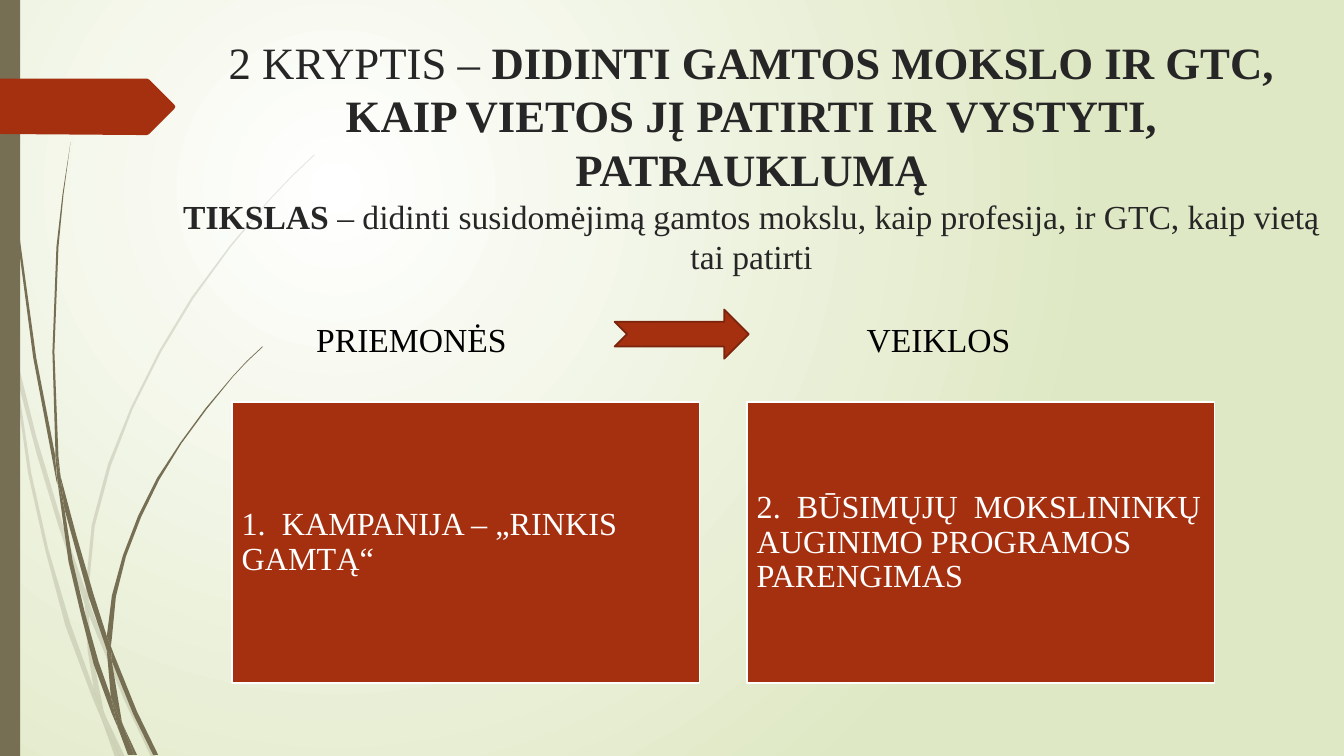
from lxml import etree
from pptx import Presentation, util as u
from pptx.dml.color import RGBColor
from pptx.enum import shapes, text
from pptx.oxml import parse_xml
from pptx.oxml.ns import nsdecls, qn

# Content: each title line is a list of (text, bold, size)
TITLE_LINES = [
    [("2 KRYPTIS – ", False, 32),
     ("DIDINTI GAMTOS MOKSLO IR GTC, KAIP VIETOS JĮ PATIRTI IR VYSTYTI, PATRAUKLUMĄ", True, 32)],
    [("TIKSLAS", True, 24),
     (" – didinti susidomėjimą gamtos mokslu, kaip profesija, ir GTC, kaip vietą tai patirti", False, 24)],
]
HEADINGS = [("PRIEMONĖS", 7.72), ("VEIKLOS", 21.59)]  # text, left in cm
CARDS = ["1.  KAMPANIJA – „RINKIS GAMTĄ“",
         "2.  BŪSIMŲJŲ  MOKSLININKŲ AUGINIMO PROGRAMOS PARENGIMAS"]

FONT = "Times New Roman"
RUST, DARK_RUST, OLIVE, WHITE = "A53010", "7A240C", "766F54", "FFFFFF"
PALE_GREEN, BLACK, TITLE_GREY = "DFE8C4", "000000", "262626"
SLIDE_WIDTH, SLIDE_HEIGHT = u.Cm(33.87), u.Cm(19.05)

# Outlines of the grass blades and the pennant, in units of 0.0254 cm
UNIT = u.Cm(0.0254)
FAINT_GRASS = [
    [(11, 350), (9, 322), (0, 282), (0, 299), (10, 344)],
    [(58, 522), (84, 599), (85, 586), (62, 520), (36, 433), (14, 345), (17, 376), (36, 449)],
    [(92, 607), (88, 596), (88, 610), (123, 694), (150, 751), (155, 751), (127, 692)],
    [(119, 751), (124, 751), (105, 711)],
    [(93, 683), (70, 619), (48, 545), (31, 469), (17, 376), (11, 350), (28, 470), (45, 546),
     (65, 621), (92, 693), (101, 714), (99, 707)],
    [(84, 599), (87, 646), (93, 683), (96, 692), (105, 711), (103, 706), (91, 646), (88, 610), (88, 608)],
    [(88, 584), (94, 522), (110, 462), (132, 405), (160, 349), (192, 296), (229, 245), (268, 198),
     (290, 175), (312, 154), (312, 153), (289, 175), (268, 197), (228, 244), (190, 295), (158, 348),
     (130, 404), (107, 461), (91, 521), (85, 584), (85, 586), (88, 596)],
    [(101, 714), (114, 751), (119, 751)],
    [(88, 608), (88, 610), (88, 596), (85, 586), (84, 599)],
    [(96, 692), (93, 683), (99, 707), (101, 714), (119, 751), (105, 711)],
]
GRASS = [
    [(7, 110), (17, 233), (33, 355), (56, 477), (57, 481), (55, 457), (55, 453), (36, 355),
     (19, 232), (8, 109), (5, 48), (4, 0), (3, 0), (4, 48)],
    [(88, 592), (106, 645), (106, 633), (106, 631), (93, 590), (76, 532), (60, 472), (64, 505)],
    [(113, 649), (110, 641), (111, 656), (132, 708), (152, 749), (157, 749), (136, 706)],
    [(110, 691), (98, 657), (84, 607), (72, 556), (64, 505), (57, 477), (68, 557), (80, 608),
     (93, 659), (111, 708), (117, 722), (116, 717)],
    [(60, 472), (58, 453), (54, 349), (58, 245), (63, 193), (70, 141), (62, 193), (56, 245),
     (52, 349), (55, 449)],
    [(133, 749), (136, 749), (122, 719)],
    [(57, 477), (64, 505), (60, 472), (55, 449), (55, 453)],
    [(111, 633), (115, 592), (125, 552), (140, 513), (158, 476), (180, 440), (205, 406), (231, 374),
     (245, 359), (261, 344), (260, 344), (245, 358), (231, 373), (204, 405), (179, 439), (156, 474),
     (137, 512), (122, 551), (111, 591), (106, 631), (110, 641)],
    [(117, 722), (127, 749), (131, 749)],
    [(106, 645), (110, 691), (116, 706), (122, 719), (121, 716), (111, 656), (109, 651)],
    [(106, 645), (109, 651), (111, 656), (110, 641), (106, 631), (106, 633)],
    [(116, 706), (110, 691), (116, 717), (117, 722), (130, 749), (133, 749), (122, 719)],
]
PENNANT = [(0, 78), (146, 78), (148, 79), (173, 104), (174, 106), (173, 108), (148, 133),
           (146, 134), (136, 134), (0, 133)]


def color(hex_string):
    return RGBColor.from_string(hex_string)


def paint(shape, fill, line=None):
    shape.shadow.inherit = False
    shape.fill.solid()
    shape.fill.fore_color.rgb = color(fill)
    if line:
        shape.line.color.rgb = color(line)
        shape.line.width = u.Pt(1.25)
    else:
        shape.line.fill.background()


def add_text(paragraph, content, size=24, bold=False, fill=BLACK):
    run = paragraph.add_run()
    run.text = content
    run.font.name, run.font.size, run.font.bold = FONT, u.Pt(size), bold
    run.font.color.rgb = color(fill)


def add_outline(container, points, fill, opacity=None):
    builder = container.build_freeform(*points[0], scale=UNIT)
    builder.add_line_segments(points[1:], close=True)
    shape = builder.convert_to_shape()
    paint(shape, fill)
    if opacity:
        rgb = shape.element.spPr.find(qn("a:solidFill")).find(qn("a:srgbClr"))
        etree.SubElement(rgb, qn("a:alpha")).set("val", str(opacity * 1000))


presentation = Presentation()
presentation.slide_width, presentation.slide_height = SLIDE_WIDTH, SLIDE_HEIGHT
slide = presentation.slides.add_slide(presentation.slide_layouts[5])

# Background: radial gradient
background = slide.background.fill
background.gradient()
for stop, stop_color in zip(background.gradient_stops, (WHITE, PALE_GREEN)):
    stop.color.rgb = color(stop_color)
linear = next(slide.element.iter(qn("a:lin")))
linear.getparent().replace(linear, parse_xml(
    f'<a:path {nsdecls("a")} path="circle">'
    '<a:fillToRect l="50000" t="50000" r="100000" b="100000"/></a:path>'))

# Grass, side bar and pennant
for blades, opacity in ((FAINT_GRASS, 20), (GRASS, None)):
    group = slide.shapes.add_group_shape()
    for blade in blades:
        add_outline(group.shapes, blade, OLIVE, opacity)
side_bar = slide.shapes.add_shape(shapes.MSO_SHAPE.RECTANGLE, 0, 0, u.Cm(0.51), SLIDE_HEIGHT)
paint(side_bar, OLIVE)
add_outline(slide.shapes, PENNANT, RUST)

# Title, brought in front of the grass
title = slide.shapes.title
title.element.getparent().append(title.element)
title.left, title.top, title.width, title.height = u.Cm(4.27), u.Cm(0.74), u.Cm(29.34), u.Cm(6.65)
title_frame = title.text_frame
title_frame.word_wrap = True
title_frame.auto_size = text.MSO_AUTO_SIZE.NONE
title_frame.vertical_anchor = text.MSO_ANCHOR.TOP
title_paragraph = title_frame.paragraphs[0]
title_paragraph.alignment = text.PP_ALIGN.CENTER
for index, line in enumerate(TITLE_LINES):
    if index:
        title_paragraph.add_line_break()
    for content, bold, size in line:
        add_text(title_paragraph, content, size=size, bold=bold, fill=TITLE_GREY)

# Cards
for index, content in enumerate(CARDS):
    card = slide.shapes.add_shape(shapes.MSO_SHAPE.RECTANGLE, u.Cm(5.84 + 12.98 * index), u.Cm(10.13),
                                  u.Cm(11.79), u.Cm(7.09))
    paint(card, RUST, WHITE)
    frame = card.text_frame
    frame.word_wrap = True
    frame.vertical_anchor = text.MSO_ANCHOR.MIDDLE
    frame.margin_left = frame.margin_right = frame.margin_top = frame.margin_bottom = u.Cm(0.25)
    paragraph = frame.paragraphs[0]
    paragraph.alignment = text.PP_ALIGN.LEFT
    paragraph.line_spacing = 0.9
    add_text(paragraph, content, size=23, fill=WHITE)

# Headings with the arrow between them
arrow = slide.shapes.add_shape(shapes.MSO_SHAPE.NOTCHED_RIGHT_ARROW, u.Cm(15.49), u.Cm(7.8),
                               u.Cm(3.38), u.Cm(1.24))
paint(arrow, RUST, DARK_RUST)
for content, left in HEADINGS:
    heading = slide.shapes.add_textbox(u.Cm(left), u.Cm(7.9), u.Cm(6.5), u.Cm(1.27))
    heading.text_frame.word_wrap = True
    add_text(heading.text_frame.paragraphs[0], content)

presentation.save("out.pptx")
